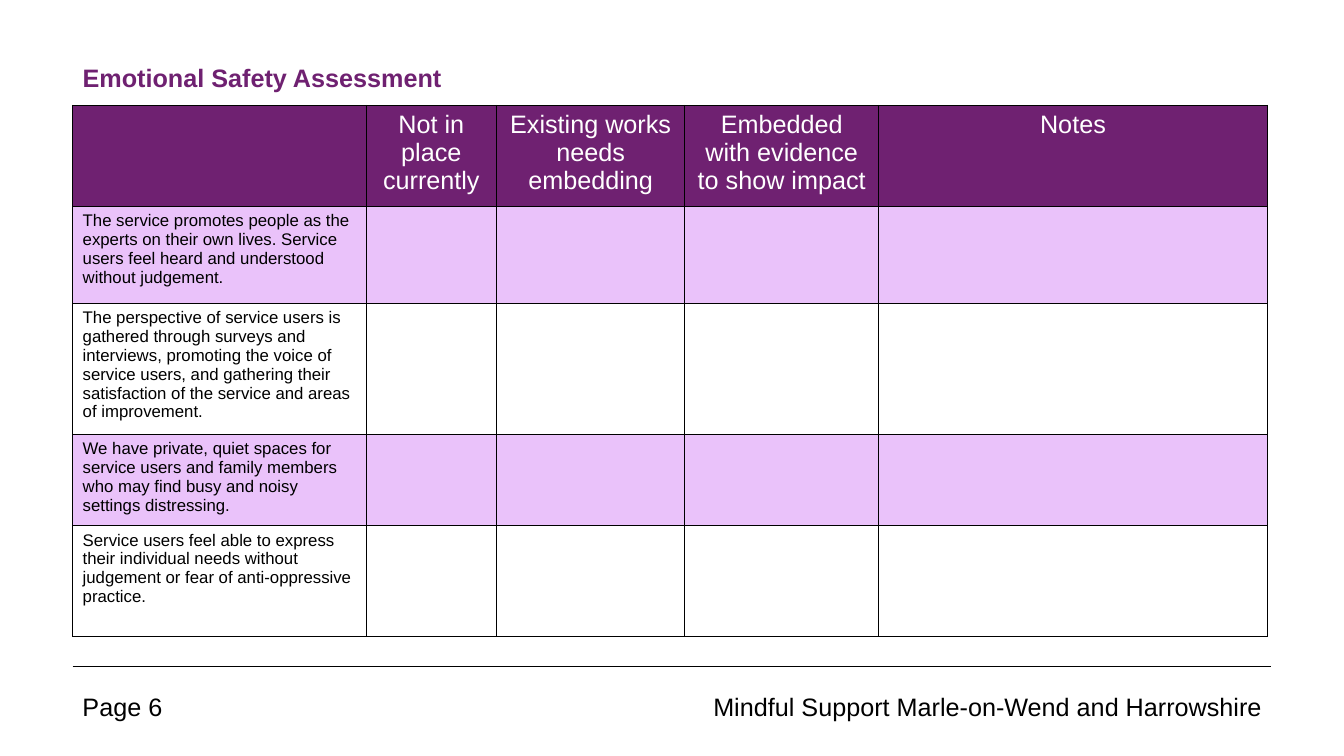
from lxml.etree import SubElement
from pptx import Presentation
from pptx.dml.color import RGBColor
from pptx.enum.shapes import MSO_CONNECTOR as Connector
from pptx.enum.text import MSO_ANCHOR as Anchor, MSO_AUTO_SIZE as AutoSize, PP_ALIGN as Align
from pptx.oxml.ns import qn
from pptx.util import Cm, Pt

COLOURS = {"purple": "6F2171", "lilac": "EAC2FA", "white": "FFFFFF", "black": "000000"}

LEFT, RIGHT = 1.83, 32.03
COLUMN_WIDTHS = [7.4, 3.28, 4.75, 4.88, 9.8]
ROW_HEIGHTS = [2.54, 2.45, 3.3, 2.3, 2.8]

HEADINGS = [
    "",
    "Not in place currently",
    "Existing works needs embedding",
    "Embedded with evidence to show impact",
    "Notes",
]
STATEMENTS = [
    "The service promotes people as the experts on their own lives. "
    "Service users feel heard and understood without judgement.",
    "The perspective of service users is gathered through surveys and interviews, "
    "promoting the voice of service users, and gathering their satisfaction of the "
    "service and areas of improvement.",
    "We have private, quiet spaces for service users and family members who may find "
    "busy and noisy settings distressing.",
    "Service users feel able to express their individual needs without judgement or "
    "fear of anti-oppressive practice.",
]


def colour(name):
    return RGBColor.from_string(COLOURS[name])


def write(text_frame, text, colour_name, size=18, bold=False, align=Align.LEFT):
    text_frame.text = text
    paragraph = text_frame.paragraphs[0]
    paragraph.alignment = align
    font = paragraph.runs[0].font if text else paragraph.font
    for name, value in {"name": "Arial", "size": Pt(size), "bold": bold}.items():
        setattr(font, name, value)
    font.color.rgb = colour(colour_name)


def format_frame(text_frame):
    values = {
        "word_wrap": True,
        "auto_size": AutoSize.NONE,
        "vertical_anchor": Anchor.TOP,
    }
    for name, value in values.items():
        setattr(text_frame, name, value)


def add_title(slide, text):
    title = slide.shapes.title
    position = {"left": LEFT, "top": 1.45, "width": RIGHT - LEFT, "height": 1.03}
    for name, value in position.items():
        setattr(title, name, Cm(value))
    format_frame(title.text_frame)
    write(title.text_frame, text, "purple", bold=True)


def add_footer_text(slide, text, left, width, align):
    box = slide.shapes.add_textbox(Cm(left), Cm(17.3), Cm(width), Cm(1.03))
    format_frame(box.text_frame)
    write(box.text_frame, text, "black", align=align)


def add_rule(slide, height):
    line = slide.shapes.add_connector(
        Connector.STRAIGHT, Cm(LEFT), Cm(height), Cm(RIGHT), Cm(height)
    )
    line.line.width = Pt(0.5)
    line.line.color.rgb = colour("black")
    SubElement(line._element.spPr, qn("a:effectLst"))


def add_borders(cell):
    properties = cell._tc.get_or_add_tcPr()
    for side in ("lnL", "lnR", "lnT", "lnB"):
        border = SubElement(properties, qn(f"a:{side}"), w=str(Pt(1)))
        fill = SubElement(border, qn("a:solidFill"))
        SubElement(fill, qn("a:srgbClr"), val=COLOURS["black"])


def fill_cell(cell, text, fill_name, **text_format):
    write(cell.text_frame, text, **text_format)
    add_borders(cell)
    cell.fill.solid()
    cell.fill.fore_color.rgb = colour(fill_name)


def add_assessment_table(slide):
    table = slide.shapes.add_table(
        len(ROW_HEIGHTS), len(COLUMN_WIDTHS), Cm(LEFT), Cm(2.66),
        Cm(sum(COLUMN_WIDTHS)), Cm(sum(ROW_HEIGHTS)),
    ).table
    for column, width in zip(table.columns, COLUMN_WIDTHS):
        column.width = Cm(width)
    for row, height in zip(table.rows, ROW_HEIGHTS):
        row.height = Cm(height)

    # Header row
    for cell, heading in zip(table.rows[0].cells, HEADINGS):
        fill_cell(cell, heading, "purple", colour_name="white", align=Align.CENTER)

    # Statement rows, shaded alternately, with blank cells for answers
    for index, statement in enumerate(STATEMENTS):
        fill_name = "white" if index % 2 else "lilac"
        for column, cell in enumerate(table.rows[index + 1].cells):
            text = "" if column else statement
            fill_cell(cell, text, fill_name, colour_name="black", size=12)


def main():
    presentation = Presentation()
    presentation.slide_width, presentation.slide_height = Cm(33.87), Cm(19.05)
    slide = presentation.slides.add_slide(presentation.slide_layouts[5])

    # Heading and table
    add_title(slide, "Emotional Safety Assessment")
    add_assessment_table(slide)

    # Footer
    add_rule(slide, 16.79)
    add_footer_text(slide, "Page 6", LEFT, 3.05, Align.LEFT)
    add_footer_text(
        slide, "Mindful Support Marle-on-Wend and Harrowshire",
        17.17, 14.88, Align.RIGHT,
    )

    presentation.save("out.pptx")


if __name__ == "__main__":
    main()
